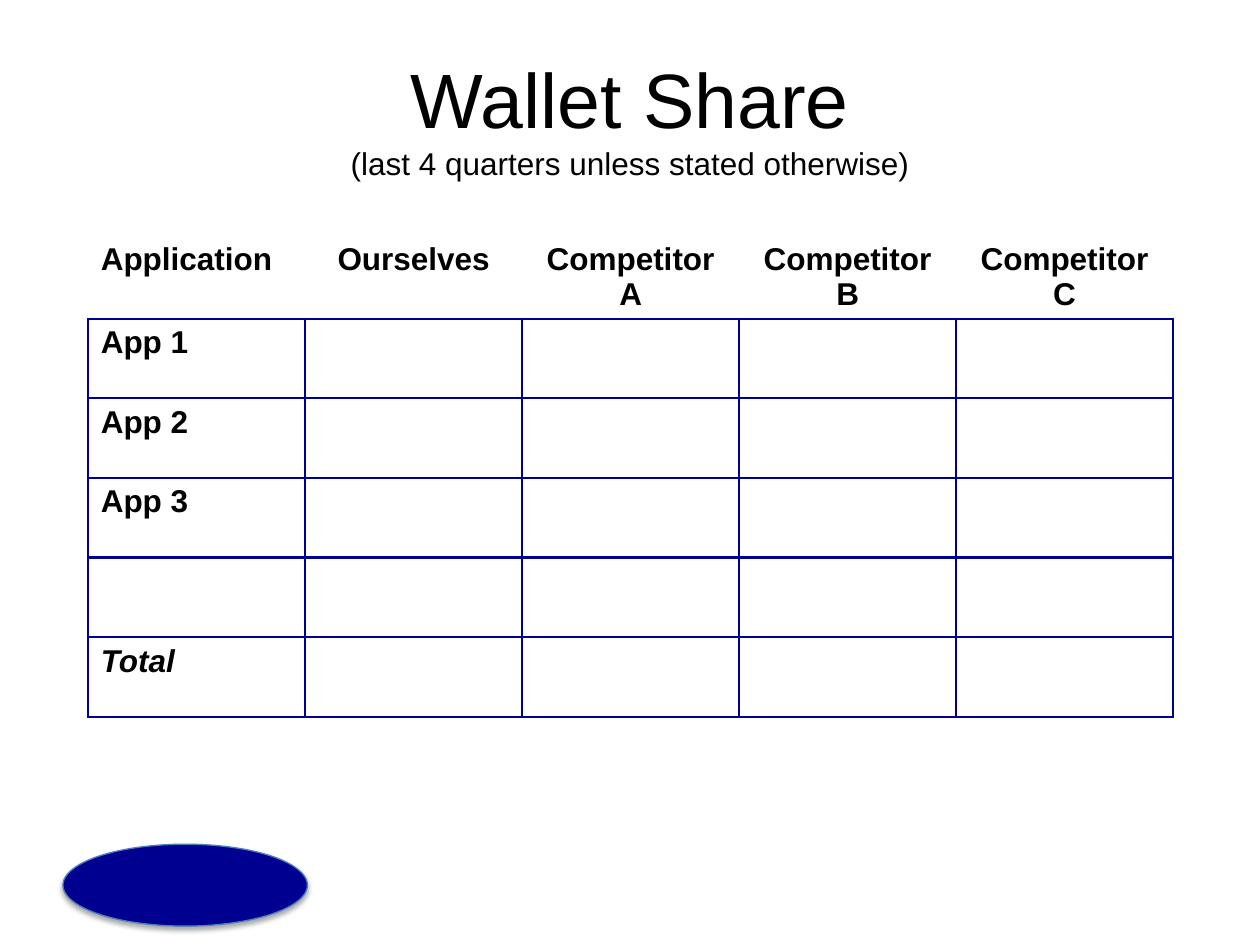
from lxml.etree import SubElement
from pptx import Presentation
from pptx.dml.color import RGBColor
from pptx.enum.shapes import MSO_SHAPE
from pptx.enum.text import MSO_ANCHOR, PP_ALIGN
from pptx.oxml import parse_xml
from pptx.oxml.ns import nsdecls, qn
from pptx.util import Pt

COLORS = {"navy": "000090", "outline": "4B7EBC", "text": "000000"}
FONT = "Arial"

# Content
TITLE = [("Wallet Share", 44), ("(last 4 quarters unless stated otherwise)", 18)]
HEADERS = ["Application", "Ourselves", "Competitor A", "Competitor B", "Competitor C"]
ROW_LABELS = ["App 1", "App 2", "App 3", "", "Total"]

# Layout in points
TABLE_LEFT, TABLE_TOP = 50.4, 134.6
COL_W, HEADER_H, ROW_H = 124, 37.5, 45.5
BORDER_W = 1.5


def rgb(name):
    return RGBColor.from_string(COLORS[name])


def format_run(r, size, bold=False, italic=False):
    r.font.name = FONT
    r.font.size = Pt(size)
    r.font.bold = bold
    r.font.italic = italic
    r.font.color.rgb = rgb("text")


def set_borders(cell, visible_sides):
    tcPr = cell._tc.get_or_add_tcPr()
    for i, side in enumerate("LRTB"):
        fill = "<a:noFill/>"
        if side in visible_sides:
            fill = f'<a:solidFill><a:srgbClr val="{COLORS["navy"]}"/></a:solidFill>'
        tcPr.insert(i, parse_xml(
            f'<a:ln{side} {nsdecls("a")} w="{Pt(BORDER_W)}">{fill}</a:ln{side}>'))


def add_shadow(sp):
    sp.shadow.inherit = False
    effects = sp._element.spPr.find(qn("a:effectLst"))
    shadow = SubElement(effects, qn("a:outerShdw"), blurRad=str(Pt(3.1)),
                        dist=str(Pt(1.8)), dir="5400000", rotWithShape="0")
    color = SubElement(shadow, qn("a:srgbClr"), val="000000")
    SubElement(color, qn("a:alpha"), val="35000")


prs = Presentation()
prs.slide_width, prs.slide_height = Pt(720), Pt(540)
s = prs.slides.add_slide(prs.slide_layouts[5])

# Ellipse at the bottom left
sp = s.shapes.add_shape(MSO_SHAPE.OVAL, Pt(36), Pt(482.4), Pt(139.7), Pt(46.8))
sp.fill.solid()
sp.fill.fore_color.rgb = rgb("navy")
sp.line.color.rgb = rgb("outline")
sp.line.width = Pt(0.75)
add_shadow(sp)

# Title with a smaller second line
title = s.shapes.title
title.left, title.top, title.width, title.height = Pt(36), Pt(21.6), Pt(648), Pt(90)
tf = title.text_frame
tf.vertical_anchor = MSO_ANCHOR.MIDDLE
p = tf.paragraphs[0]
p.text = "\v".join(text for text, _ in TITLE)
p.alignment = PP_ALIGN.CENTER
for r, (_, size) in zip(p.runs, TITLE):
    format_run(r, size)

# Table
rows = [HEADERS] + [[label] + [""] * (len(HEADERS) - 1) for label in ROW_LABELS]
heights = [HEADER_H] + [ROW_H] * len(ROW_LABELS)
table = s.shapes.add_table(len(rows), len(HEADERS), Pt(TABLE_LEFT), Pt(TABLE_TOP),
                           Pt(COL_W * len(HEADERS)), Pt(sum(heights))).table
table.first_row = table.horz_banding = False
for col in table.columns:
    col.width = Pt(COL_W)
for i, (texts, height) in enumerate(zip(rows, heights)):
    table.rows[i].height = Pt(height)
    for j, text in enumerate(texts):
        cell = table.cell(i, j)
        cell.fill.background()
        set_borders(cell, "LRTB" if i else "B")
        p = cell.text_frame.paragraphs[0]
        p.text = text
        p.alignment = PP_ALIGN.CENTER if j else PP_ALIGN.LEFT
        for r in p.runs:
            format_run(r, 18, bold=True, italic=text == "Total")

prs.save("out.pptx")
